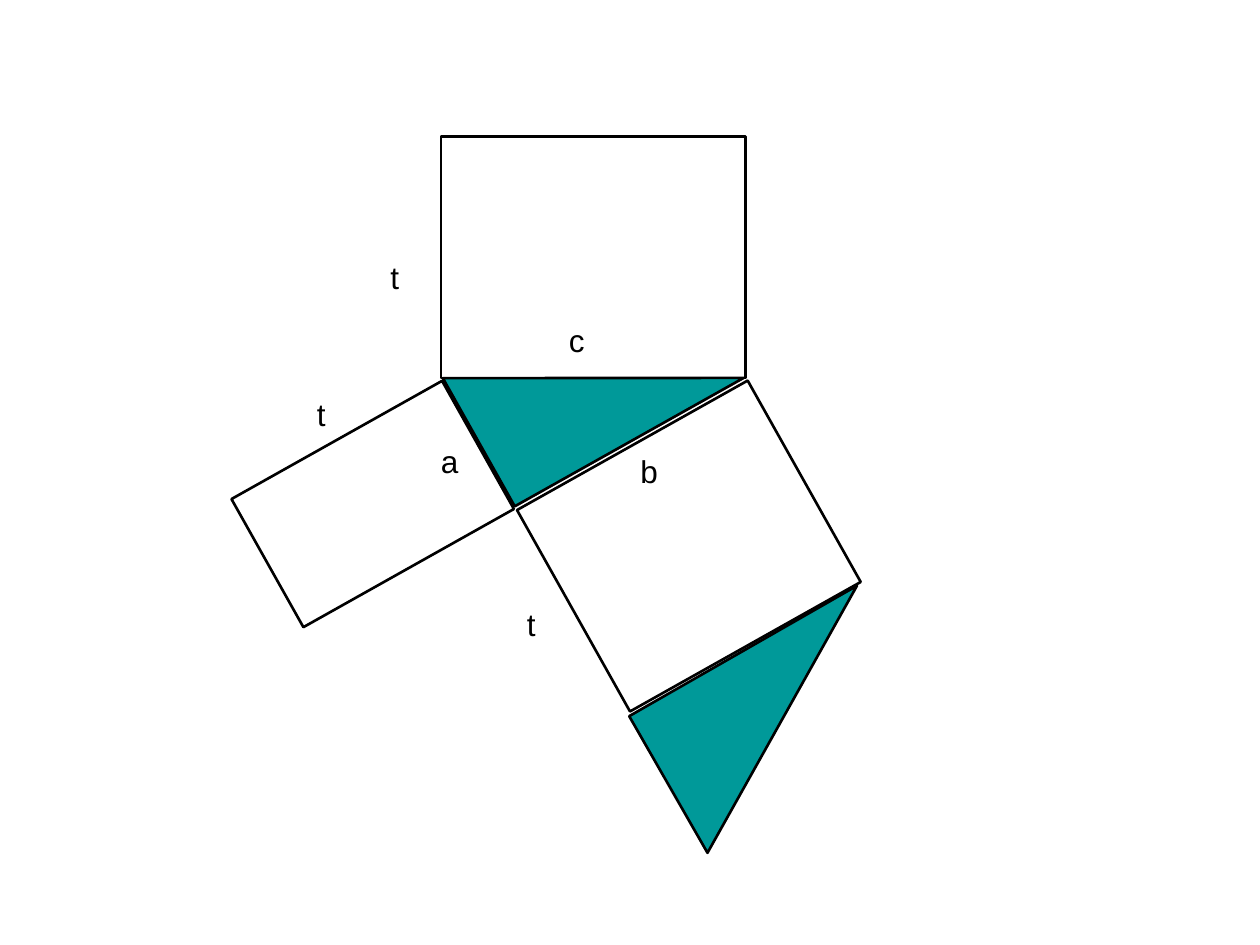
from collections import namedtuple
from dataclasses import dataclass

from pptx import Presentation
from pptx import util as u
from pptx.dml.color import RGBColor
from pptx.enum import shapes, text

COLUMNS, ROWS = 120, 90
Box = namedtuple("Box", "left top width height")


@dataclass(frozen=True)
class Theme:
    ink: RGBColor = RGBColor.from_string("000000")
    paper: RGBColor = RGBColor.from_string("FFFFFF")
    base: RGBColor = RGBColor.from_string("009999")
    font: str = "Arial"
    label_size: int = u.Pt(18)
    outline: int = u.Pt(1.5)


THEME = Theme()
DECK_SIZE = {"slide_width": u.Inches(10), "slide_height": u.Inches(7.5)}
CELL_WIDTH = DECK_SIZE["slide_width"] / COLUMNS
CELL_HEIGHT = DECK_SIZE["slide_height"] / ROWS

RECTANGLE = shapes.MSO_SHAPE.RECTANGLE
TRIANGLE = shapes.MSO_SHAPE.RIGHT_TRIANGLE
FACES = [
    (RECTANGLE, THEME.paper, Box(14, 0, 29, 23), 0),
    (TRIANGLE, THEME.base, Box(16, 16, 25, 14), 330.7),
    (RECTANGLE, THEME.paper, Box(25, 28, 25.2, 22), 150.7),
    (RECTANGLE, THEME.paper, Box(0.5, 23.5, 14, 23), 240.7),
    (TRIANGLE, THEME.base, Box(39, 43, 15, 25), 60.2),
]
LABELS = [
    ("c", Box(25, 17, 4.2, 4.8), True),
    ("t", Box(21, 44, 3.2, 4.8), False),
    ("t", Box(1, 24, 3.2, 4.8), False),
    ("t", Box(8, 11, 3.2, 4.8), False),
    ("a", Box(12.8, 28.5, 4.2, 4.8), True),
    ("b", Box(31.8, 29.5, 4.1, 4.8), False),
]


def apply(target, formats):
    for name, value in formats.items():
        setattr(target, name, value)


def place(box, part):
    return (
        u.Emu(round((box.left + part.left) * CELL_WIDTH)),
        u.Emu(round((box.top + part.top) * CELL_HEIGHT)),
        u.Emu(round(part.width * CELL_WIDTH)),
        u.Emu(round(part.height * CELL_HEIGHT)),
    )


def draw_faces(page, box):
    for kind, colour, part, angle in FACES:
        face = page.shapes.add_shape(kind, *place(box, part))
        face.rotation = angle
        face.shadow.inherit = False
        face.fill.solid()
        face.fill.fore_color.rgb = colour
        face.line.color.rgb = THEME.ink
        face.line.width = THEME.outline


def draw_labels(page, box):
    for wording, part, wraps in LABELS:
        frame = page.shapes.add_textbox(*place(box, part)).text_frame
        apply(frame, {
            "word_wrap": wraps,
            "auto_size": text.MSO_AUTO_SIZE.SHAPE_TO_FIT_TEXT,
        })
        span = frame.paragraphs[0].add_run()
        span.text = wording
        apply(span.font, {"name": THEME.font, "size": THEME.label_size})
        span.font.color.rgb = THEME.ink


def draw_prism_net(page, box):
    draw_faces(page, box)
    draw_labels(page, box)


def main():
    deck = Presentation()
    apply(deck, DECK_SIZE)
    page = deck.slides.add_slide(deck.slide_layouts[6])
    draw_prism_net(page, Box(28, 13, 54, 68))
    deck.save("out.pptx")


if __name__ == "__main__":
    main()
